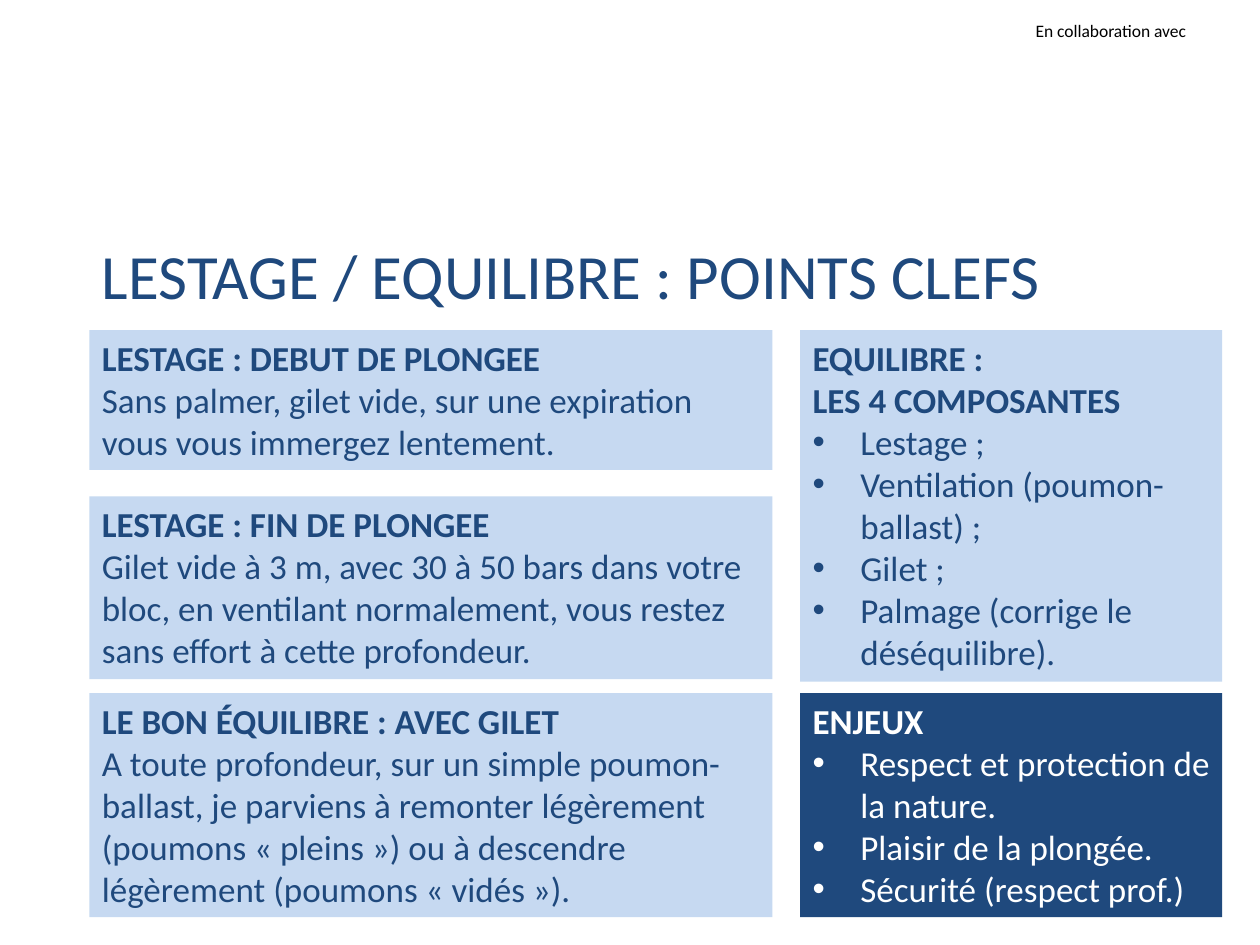
from lxml.etree import SubElement
from pptx import Presentation
from pptx.dml.color import RGBColor
from pptx.enum.shapes import MSO_SHAPE as Shape
from pptx.enum.text import MSO_ANCHOR as Anchor, MSO_AUTO_SIZE as Fit, PP_ALIGN as Align
from pptx.oxml.ns import qn
from pptx.util import Inches, Pt

NAVY, PALE, WHITE, BLACK = "1F497D", "C6D9F1", "FFFFFF", "000000"
FONT = "Calibri"
# Columns as (left, width), rows as tops, in inches
LEFT, RIGHT = (0.71, 5.42), (6.35, 3.35)
ROWS = (2.62, 3.94, 5.5)
INDENT = Inches(0.38)


def color(code):
    return RGBColor.from_string(code)


def add_run(para, text, size, ink, bold=False):
    run = para.add_run()
    run.text = text
    font = run.font
    font.name, font.size, font.bold = FONT, Pt(size), bold
    font.color.rgb = color(ink)


def add_bullet(para):
    """Give the paragraph a round bullet with a hanging indent."""
    props = para._p.get_or_add_pPr()
    props.set("marL", str(INDENT))
    props.set("indent", str(-INDENT))
    SubElement(props, qn("a:buFont"), typeface="Arial")
    SubElement(props, qn("a:buChar"), char="•")


def add_label(slide, box, text, size, ink, wrap=True):
    frame = slide.shapes.add_textbox(*map(Inches, box)).text_frame
    frame.word_wrap = wrap
    frame.auto_size = Fit.SHAPE_TO_FIT_TEXT
    add_run(frame.paragraphs[0], text, size, ink)


def add_card(slide, col, row, height, heads, body=(), items=(), fill=PALE, ink=NAVY):
    """Draw a filled card: bold heads, then plain body lines, then bullets."""
    left, width = col
    box = (left, ROWS[row], width, height)
    card = slide.shapes.add_shape(Shape.RECTANGLE, *map(Inches, box))
    card.shadow.inherit = False
    card.fill.solid()
    card.fill.fore_color.rgb = color(fill)
    card.line.fill.background()
    frame = card.text_frame
    frame.word_wrap = True
    frame.auto_size = Fit.SHAPE_TO_FIT_TEXT
    frame.vertical_anchor = Anchor.TOP
    lines = [*heads, *body, *items]
    for i, text in enumerate(lines):
        para = frame.paragraphs[0] if i == 0 else frame.add_paragraph()
        para.alignment = Align.LEFT
        if i >= len(heads) + len(body):
            add_bullet(para)
        add_run(para, text, 20, ink, bold=i < len(heads))


def main():
    deck = Presentation()
    deck.slide_width, deck.slide_height = Inches(10), Inches(7.5)
    slide = deck.slides.add_slide(deck.slide_layouts[6])

    add_label(slide, (8.12, 0.11, 1.42, 0.27), "En collaboration avec", 10, BLACK, wrap=False)
    add_label(slide, (LEFT[0], 1.83, 9.29, 0.71), "LESTAGE / EQUILIBRE : POINTS CLEFS", 36, NAVY)

    add_card(slide, LEFT, 0, 1.11, ["LESTAGE : DEBUT DE PLONGEE"], [
        "Sans palmer, gilet vide, sur une expiration vous vous immergez lentement."])
    add_card(slide, LEFT, 1, 1.45, ["LESTAGE : FIN DE PLONGEE"], [
        "Gilet vide à 3 m, avec 30 à 50 bars dans votre bloc, en ventilant "
        "normalement, vous restez sans effort à cette profondeur."])
    add_card(slide, LEFT, 2, 1.78, ["LE BON ÉQUILIBRE : AVEC GILET"], [
        "A toute profondeur, sur un simple poumon-ballast, je parviens à remonter "
        "légèrement (poumons « pleins ») ou à descendre légèrement "
        "(poumons « vidés »)."])
    add_card(slide, RIGHT, 0, 2.79, ["EQUILIBRE :", "LES 4 COMPOSANTES"], items=[
        "Lestage ;", "Ventilation (poumon-ballast) ;", "Gilet ;",
        "Palmage (corrige le déséquilibre)."])
    add_card(slide, RIGHT, 2, 1.78, ["ENJEUX"], items=[
        "Respect et protection de la nature.", "Plaisir de la plongée.",
        "Sécurité (respect prof.)"], fill=NAVY, ink=WHITE)

    deck.save("out.pptx")


if __name__ == "__main__":
    main()
